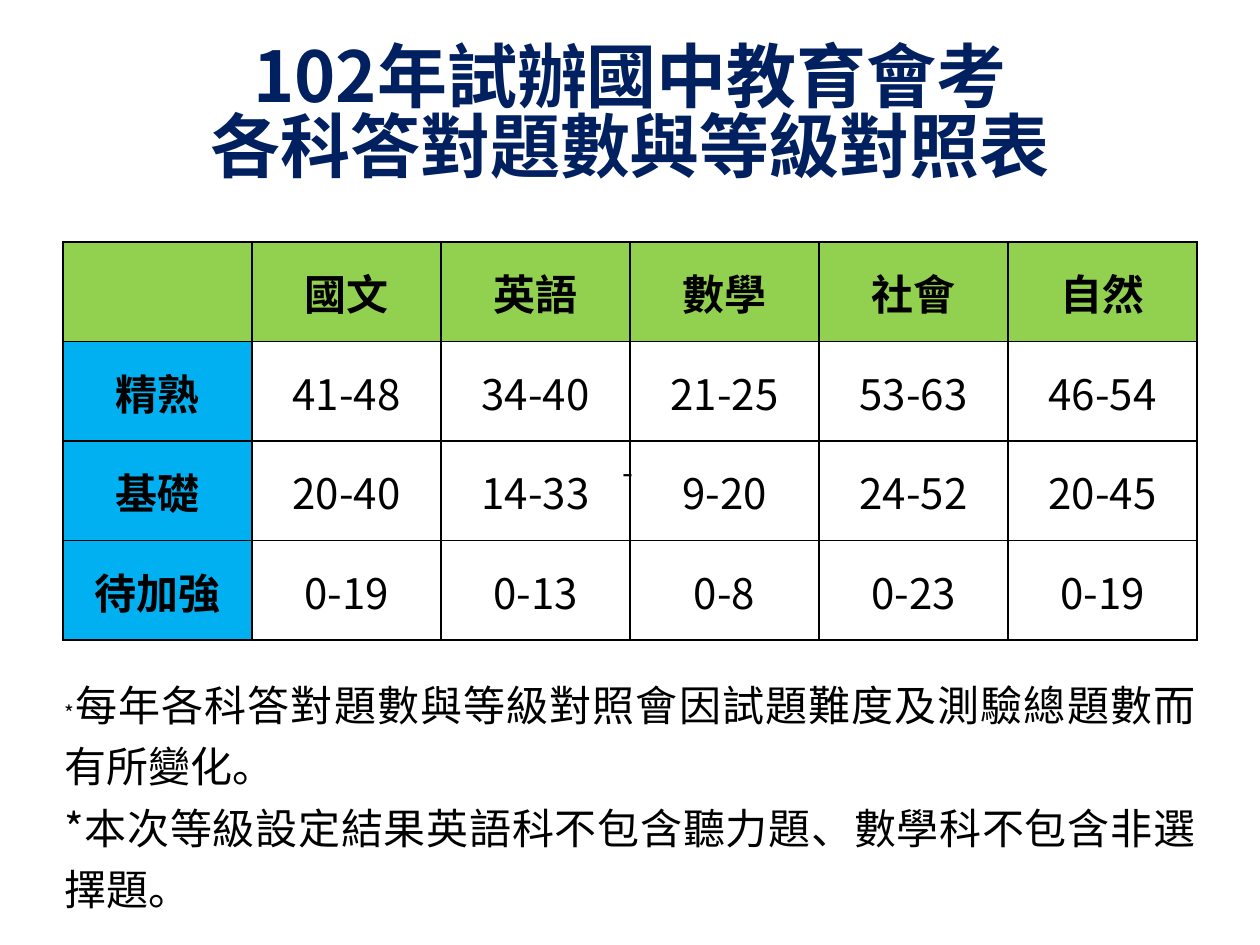
from lxml.etree import SubElement
from pptx import Presentation
from pptx.dml.color import RGBColor
from pptx.enum.text import MSO_ANCHOR, MSO_AUTO_SIZE, PP_ALIGN
from pptx.oxml.ns import qn
from pptx.util import Inches, Pt

# Content
TITLE = "102年試辦國中教育會考\v各科答對題數與等級對照表"
GRID = [
    ("", "國文", "英語", "數學", "社會", "自然"),
    ("精熟", "41-48", "34-40", "21-25", "53-63", "46-54"),
    ("基礎", "20-40", "14-33", "9-20", "24-52", "20-45"),
    ("待加強", "0-19", "0-13", "0-8", "0-23", "0-19"),
]
NOTES = [
    ("*", "每年各科答對題數與等級對照會因試題難度及測驗總題數而有所變化。"),
    ("*本次等級設定結果英語科不包含聽力題、數學科不包含非選擇題。",),
]
HEIGHTS = [0.39] + [0.79] * len(GRID) + [1.01, 0.81]
FACE = "Noto Sans CJK SC"
BLACK, NAVY, GREEN, BLUE = "000000", "002060", "92D050", "00B0F0"
PLAIN = "{2D5ABB26-0587-4C30-8999-92F81FD0307C}"


def color(code):
    return RGBColor.from_string(code)


def style(para, size, bold=False, code=BLACK, align=PP_ALIGN.CENTER):
    para.alignment = align
    font = para.font
    font.size, font.bold, font.name = Pt(size), bold, FACE
    font.color.rgb = color(code)
    props = para._p.pPr.find(qn("a:defRPr"))
    SubElement(props, qn("a:ea"), typeface=FACE)


def inset(cell, top=0.01):
    cell.margin_left = cell.margin_right = Inches(0.01)
    cell.margin_top, cell.margin_bottom = Inches(top), 0
    cell.vertical_anchor = MSO_ANCHOR.MIDDLE


def border(cell, sides):
    props = cell._tc.get_or_add_tcPr()
    for side in sides:
        line = SubElement(props, qn(f"a:ln{side}"), w=str(Pt(1)))
        fill = SubElement(line, qn("a:solidFill"))
        SubElement(fill, qn("a:srgbClr"), val=BLACK)


deck = Presentation()
deck.slide_width, deck.slide_height = Inches(10), Inches(7.5)
slide = deck.slides.add_slide(deck.slide_layouts[5])

# Title
title = slide.shapes.title
title.left, title.top = Inches(0.5), Inches(0.3)
title.width, title.height = Inches(9), Inches(1.25)
title.text_frame.text = TITLE
title.text_frame.vertical_anchor = MSO_ANCHOR.MIDDLE
head = title.text_frame.paragraphs[0]
head.line_spacing = 0.83
style(head, 40, True, NAVY)

# Table frame
frame = slide.shapes.add_table(
    len(HEIGHTS), len(GRID[0]), Inches(0.5), Inches(1.53),
    Inches(9), Inches(sum(HEIGHTS)))
table = frame.table
table.first_row = table.horz_banding = False
table._tbl.tblPr.find(qn("a:tableStyleId")).text = PLAIN
for row, height in zip(table.rows, HEIGHTS):
    row.height = Inches(height)

# Full-width rows: a spacer on top, the notes below
last = len(GRID[0]) - 1
first = len(GRID) + 1
for r in (0, first, first + 1):
    table.cell(r, 0).merge(table.cell(r, last))
    inset(table.cell(r, 0))
for r, parts in enumerate(NOTES, first):
    cell = table.cell(r, 0)
    inset(cell, 0.26 if r == first else 0.01)
    para = cell.text_frame.paragraphs[0]
    style(para, 24, align=PP_ALIGN.JUSTIFY)
    for part in parts:
        run = para.add_run()
        run.text = part
        if part == "*":
            run.font.size = Pt(12)

# Score grid
for r, words in enumerate(GRID):
    for c, word in enumerate(words):
        cell = table.cell(r + 1, c)
        cell.text = word
        inset(cell)
        border(cell, "LRTB")
        if r == 0 or c == 0:
            cell.fill.solid()
            cell.fill.fore_color.rgb = color(BLUE if r else GREEN)
        style(cell.text_frame.paragraphs[0], 24, r == 0 or c == 0)

# Small dash beside the grid
dash = slide.shapes.add_textbox(
    Inches(4.84), Inches(3.55), Inches(0.33), Inches(0.4)).text_frame
dash.word_wrap = False
dash.auto_size = MSO_AUTO_SIZE.SHAPE_TO_FIT_TEXT
dash.text = "-"
style(dash.paragraphs[0], 18, align=PP_ALIGN.LEFT)

deck.save("out.pptx")
